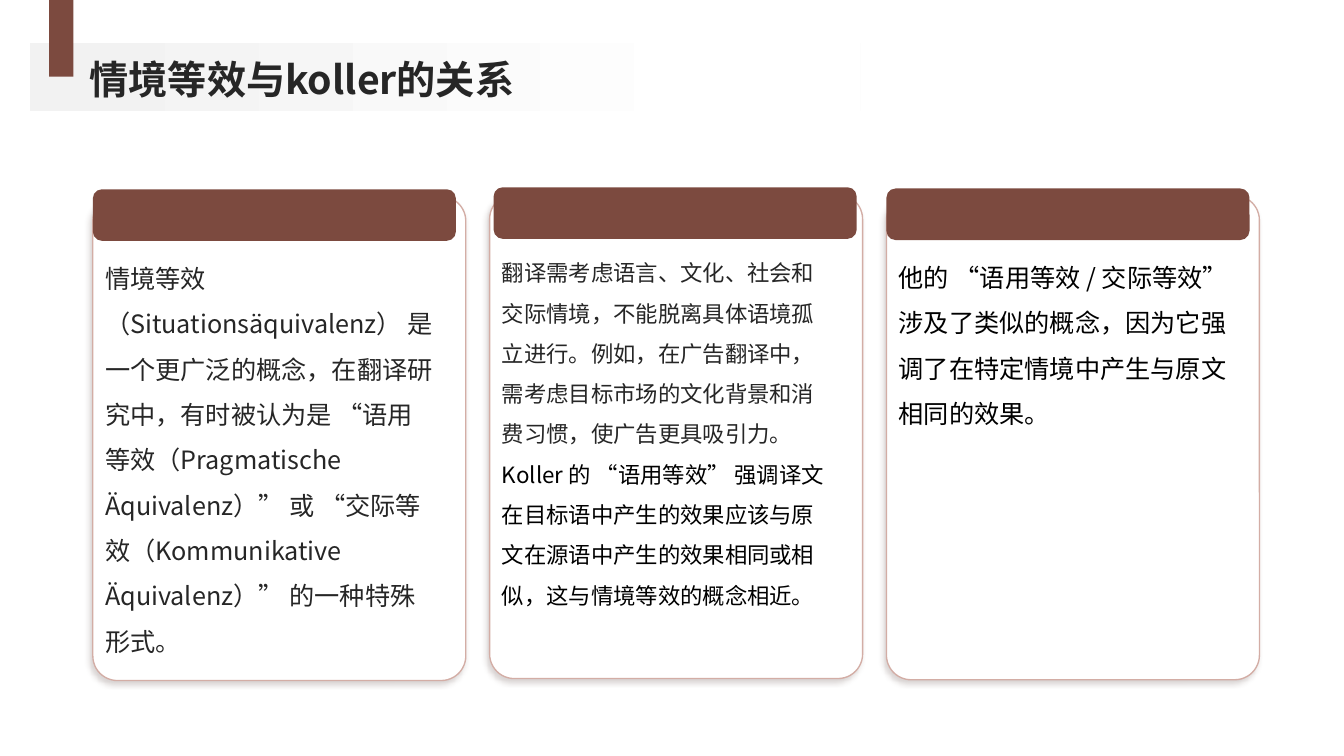
from lxml import etree
from pptx import Presentation
from pptx import util as u
from pptx.dml.color import RGBColor
from pptx.enum import lang, shapes, text
from pptx.oxml import ns

Cm, Pt = u.Cm, u.Pt
FONT = "Noto Sans CJK SC"
COLORS = {
    "brown": "7C4A3F",
    "edge": "D3ADA5",
    "shadow": "3E2520",
    "white": "FFFFFF",
    "grey": "F2F2F2",
    "dark": "262626",
    "black": "000000",
}


def rgb(name):
    return RGBColor.from_string(COLORS[name])


def add_box(s, kind, x, y, w, h, fill=None, radius=None):
    sp = s.shapes.add_shape(kind, Cm(x), Cm(y), Cm(w), Cm(h))
    sp.shadow.inherit = False
    sp.line.fill.background()
    if fill:
        sp.fill.solid()
        sp.fill.fore_color.rgb = rgb(fill)
    if radius:
        sp.adjustments[0] = radius
    return sp


def add_shadow(sp):
    effects = sp._element.spPr.find(ns.qn("a:effectLst"))
    shadow = etree.SubElement(
        effects, ns.qn("a:outerShdw"), blurRad=str(Pt(4)), dist=str(Pt(3)),
        dir=str(135 * 60000), algn="tr", rotWithShape="0")
    color = etree.SubElement(shadow, ns.qn("a:srgbClr"), val=COLORS["shadow"])
    etree.SubElement(color, ns.qn("a:alpha"), val="20000")


def add_text(s, x, y, w, h, runs, size, spacing, bold=False,
             anchor=text.MSO_ANCHOR.TOP):
    tf = s.shapes.add_textbox(Cm(x), Cm(y), Cm(w), Cm(h)).text_frame
    tf.word_wrap = True
    tf.vertical_anchor = anchor
    tf.margin_left = tf.margin_right = tf.margin_top = tf.margin_bottom = 0
    p = tf.paragraphs[0]
    p.line_spacing = spacing
    for words, color in runs:
        r = p.add_run()
        r.text = words
        r.font.size = Pt(size)
        r.font.bold = bold
        r.font.color.rgb = rgb(color)
        r.font.name = FONT
        r.font.language_id = lang.MSO_LANGUAGE_ID.SIMPLIFIED_CHINESE
        # East Asian typeface
        etree.SubElement(r.font._element, ns.qn("a:ea"), typeface=FONT)


def add_header(s, x, y, w, h, title):
    # Fading band
    band = add_box(s, shapes.MSO_SHAPE.RECTANGLE, x, y, w, h)
    band.fill.gradient()
    band.fill.gradient_angle = 0
    stops = ((0.05, "grey"), (0.84, "white"))
    for stop, (position, color) in zip(band.fill.gradient_stops, stops):
        stop.position = position
        stop.color.rgb = rgb(color)
    # Hanging tab
    add_box(s, shapes.MSO_SHAPE.RECTANGLE, x + 0.48, 0, 0.61, 1.93, "brown")
    # Title
    add_text(s, x + 1.5, y + 0.2, 29.72, 1.3, [(title, "dark")], 28, 1.1,
             bold=True, anchor=text.MSO_ANCHOR.MIDDLE)


def add_card(s, x, y, w, h, bar_shift, size, runs):
    rounded = shapes.MSO_SHAPE.ROUNDED_RECTANGLE
    # Panel
    panel = add_box(s, rounded, x, y, w, h, "white", 0.066)
    panel.line.color.rgb = rgb("edge")
    panel.line.width = Pt(0.95)
    add_shadow(panel)
    # Top bar
    add_box(s, rounded, x + bar_shift, y - 0.18, w - 0.25, 1.3, "brown", 0.177)
    # Body text
    add_text(s, x + 0.31, y + 1.3, 8.31, 10.31, runs, size, 1.5)


# Card top, bar shift, text size, text runs
CARDS = [
    (4.95, 0, 18, [
        ("情境等效（Situationsäquivalenz） 是一个更广泛的概念，在翻译研究中，"
         "有时被认为是 “语用等效（Pragmatische Äquivalenz）” 或 "
         "“交际等效（Kommunikative Äquivalenz）” 的一种特殊形式。", "dark")]),
    (4.9, 0.1, 16, [
        ("翻译需考虑语言、文化、社会和交际情境，不能脱离具体语境孤立进行。"
         "例如，在广告翻译中，需考虑目标市场的文化背景和消费习惯，"
         "使广告更具吸引力。", "dark"),
        ("Koller 的 “语用等效” 强调译文在目标语中产生的效果应该与原文"
         "在源语中产生的效果相同或相似，这与情境等效的概念相近。", "black")]),
    (4.93, 0, 18, [
        ("他的 “语用等效 / 交际等效” 涉及了类似的概念，"
         "因为它强调了在特定情境中产生与原文相同的效果。", "black")]),
]


def main():
    prs = Presentation()
    prs.slide_width, prs.slide_height = Cm(33.87), Cm(19.05)
    s = prs.slides.add_slide(prs.slide_layouts[6])
    for i, (top, bar_shift, size, runs) in enumerate(CARDS):
        add_card(s, 2.34 + 10 * i, top, 9.4, 12.2, bar_shift, size, runs)
    add_header(s, 0.76, 1.09, 20.93, 1.7, "情境等效与koller的关系")
    prs.save("out.pptx")


if __name__ == "__main__":
    main()
